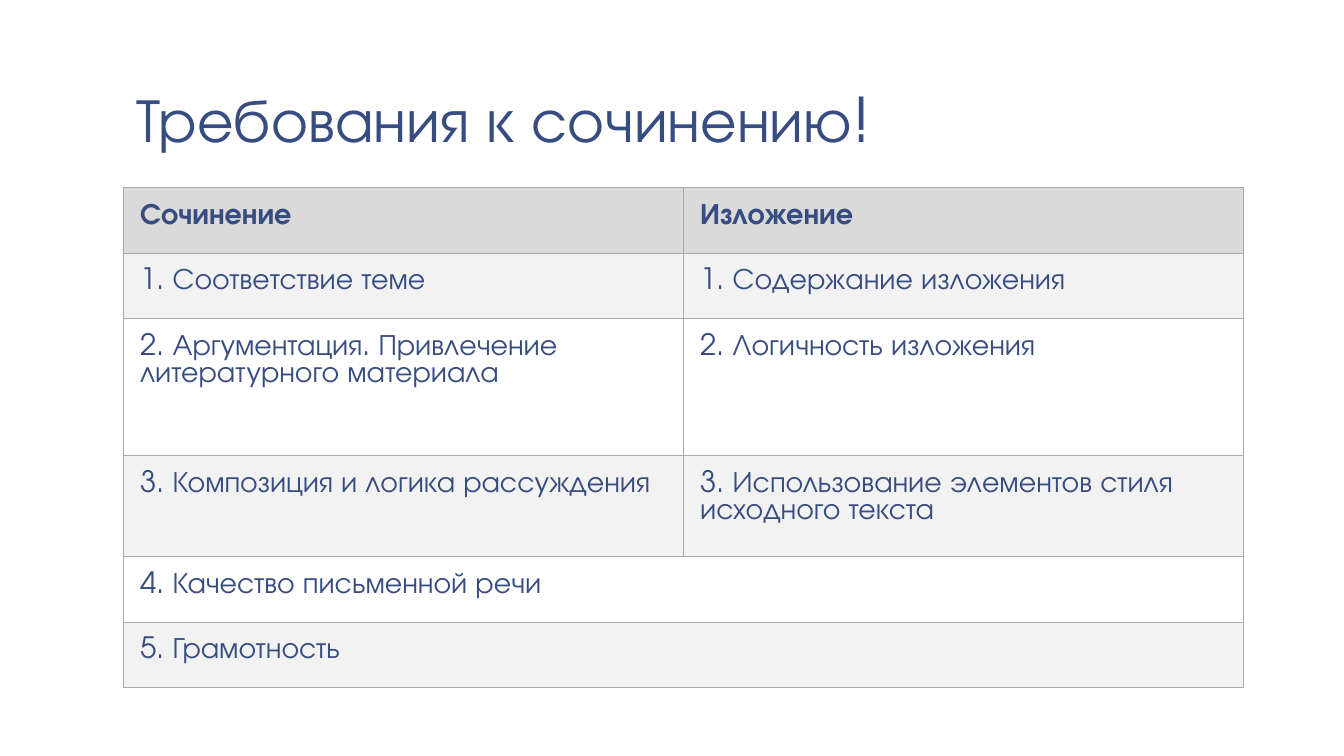
from lxml.etree import SubElement as add_sub
from pptx import Presentation
from pptx.dml.color import RGBColor
from pptx.enum.text import MSO_ANCHOR as Anchor
from pptx.oxml.ns import qn
from pptx.util import Pt

PX = 9144  # EMU: 100 px to the inch
FONT = "TeX Gyre Adventor"
NAVY = RGBColor(0x37, 0x4C, 0x81)
HEAD = RGBColor(0xDA, 0xDA, 0xDA)
BAND = RGBColor(0xF2, 0xF2, 0xF2)
WHITE = RGBColor(0xFF, 0xFF, 0xFF)
RULE = RGBColor(0xA9, 0xAB, 0xAD)

LEFT, WIDTH = 122, 1111
# Height and texts of each row; one text spans both columns
ROWS = [
    (65, ["Сочинение", "Изложение"]),
    (65, ["1. Соответствие теме", "1. Содержание изложения"]),
    (136, ["2. Аргументация. Привлечение литературного материала",
           "2. Логичность изложения"]),
    (100, ["3. Композиция и логика рассуждения",
           "3. Использование элементов стиля исходного текста"]),
    (65, ["4. Качество письменной речи"]),
    (65, ["5. Грамотность"]),
]


def px(*sizes):
    return [size * PX for size in sizes]


def set_text(frame, text, size, bold=False):
    para = frame.paragraphs[0]
    para.text = text
    font = para.font
    font.name, font.size, font.bold = FONT, Pt(size), bold
    font.color.rgb = NAVY
    return para


def set_pad(item, side, top):
    item.margin_left = item.margin_right = side * PX
    item.margin_top = item.margin_bottom = top * PX


def add_title(slide, text):
    frame = slide.shapes.add_textbox(*px(LEFT, 8, WIDTH, 153)).text_frame
    frame.word_wrap = True
    frame.vertical_anchor = Anchor.BOTTOM
    set_pad(frame, 13, 7)
    set_text(frame, text, 44).line_spacing = 0.85


def set_edges(cell):
    props = cell._tc.get_or_add_tcPr()
    for i, tag in enumerate(("a:lnL", "a:lnR", "a:lnT", "a:lnB")):
        line = props.makeelement(qn(tag), {"w": str(Pt(0.75))})
        fill = add_sub(line, qn("a:solidFill"))
        add_sub(fill, qn("a:srgbClr"), val=str(RULE))
        props.insert(i, line)


def style_cell(cell, color):
    cell.fill.solid()
    cell.fill.fore_color.rgb = color
    set_pad(cell, 17, 15)
    set_edges(cell)


def add_grid(slide, rows):
    total = sum(height for height, _ in rows)
    shape = slide.shapes.add_table(len(rows), 2, *px(LEFT, 186, WIDTH, total))
    table = shape.table
    for r, (height, texts) in enumerate(rows):
        table.rows[r].height = height * PX
        color = HEAD if r == 0 else BAND if r % 2 else WHITE
        for cell in table.rows[r].cells:
            style_cell(cell, color)
        if len(texts) == 1:
            table.cell(r, 0).merge(table.cell(r, 1))
        for c, text in enumerate(texts):
            set_text(table.cell(r, c).text_frame, text, 21, r == 0)


def main():
    deck = Presentation()
    deck.slide_width, deck.slide_height = px(1333, 750)
    slide = deck.slides.add_slide(deck.slide_layouts[6])
    add_title(slide, "Требования к сочинению!")
    add_grid(slide, ROWS)
    deck.save("out.pptx")


if __name__ == "__main__":
    main()
